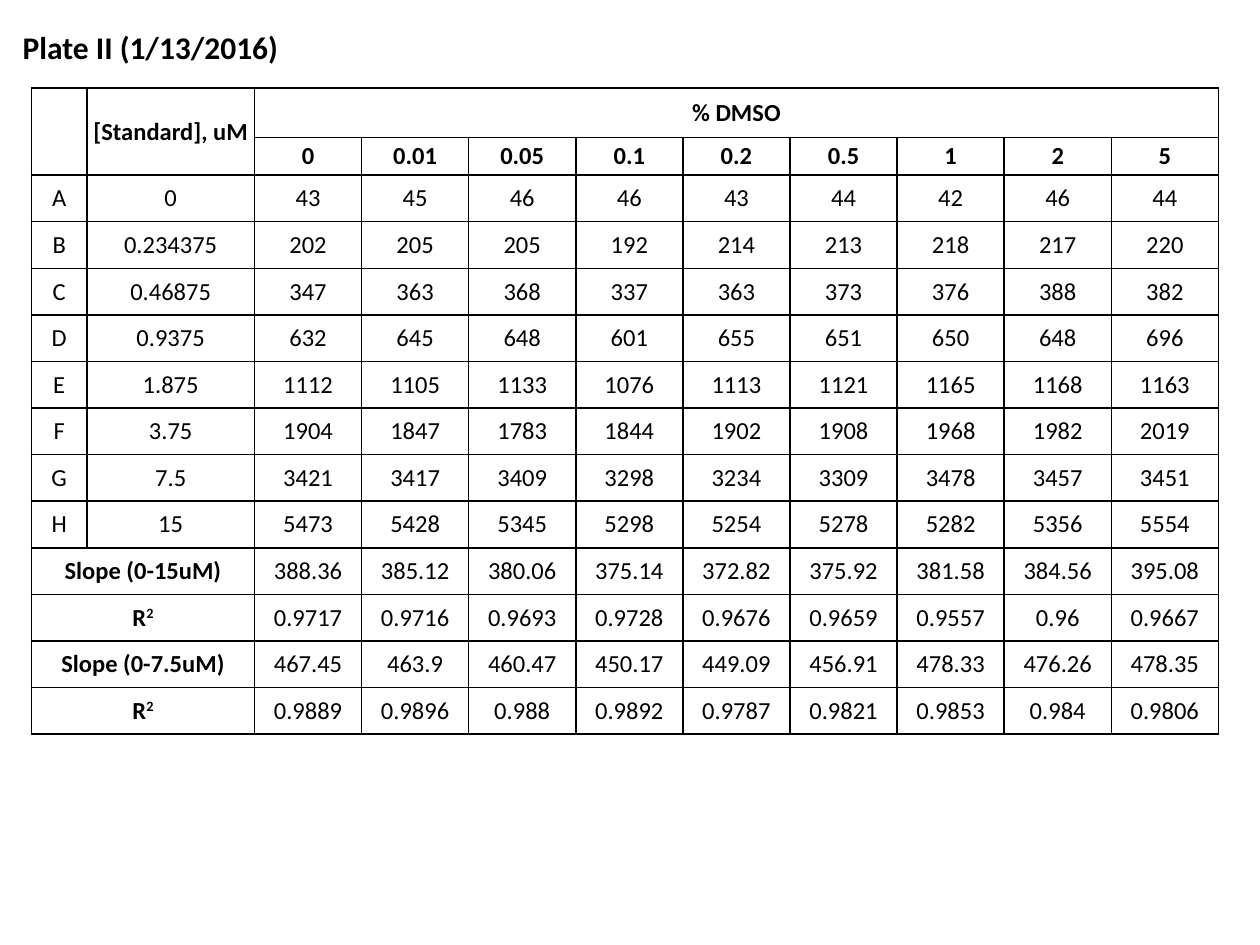
"""Build the Plate II slide: a table of readings by standard and % DMSO."""
from dataclasses import dataclass

from lxml import etree
from pptx import Presentation
from pptx import util as u
from pptx.dml import color
from pptx.enum import text
from pptx.oxml import ns


@dataclass(frozen=True)
class Theme:
    font: str = "Calibri"
    ink: color.RGBColor = color.RGBColor(0, 0, 0)
    title: u.Pt = u.Pt(18)
    body: u.Pt = u.Pt(14)
    border: u.Pt = u.Pt(1)


theme = Theme()


def write(tf, words, size=theme.body, bold=False, align=text.PP_ALIGN.CENTER, sup=""):
    p = tf.paragraphs[0]
    p.alignment = align
    for part in [words, sup] if sup else [words]:
        r = p.add_run()
        r.text = part
        r.font.name, r.font.size, r.font.bold = theme.font, size, bold
        r.font.color.rgb = theme.ink
    if sup:
        r.font._element.set("baseline", "30000")


def add_borders(cell):
    tcPr = cell._tc.get_or_add_tcPr()
    for side in ("a:lnL", "a:lnR", "a:lnT", "a:lnB"):
        ln = etree.SubElement(tcPr, ns.qn(side), w=str(theme.border))
        fill = etree.SubElement(ln, ns.qn("a:solidFill"))
        etree.SubElement(fill, ns.qn("a:srgbClr"), val=str(theme.ink))


dmso = "0 0.01 0.05 0.1 0.2 0.5 1 2 5".split()
readings = """
A 0 43 45 46 46 43 44 42 46 44
B 0.234375 202 205 205 192 214 213 218 217 220
C 0.46875 347 363 368 337 363 373 376 388 382
D 0.9375 632 645 648 601 655 651 650 648 696
E 1.875 1112 1105 1133 1076 1113 1121 1165 1168 1163
F 3.75 1904 1847 1783 1844 1902 1908 1968 1982 2019
G 7.5 3421 3417 3409 3298 3234 3309 3478 3457 3451
H 15 5473 5428 5345 5298 5254 5278 5282 5356 5554
"""
fits = [
    ("Slope (0-15uM)", "388.36 385.12 380.06 375.14 372.82 375.92 381.58 384.56 395.08"),
    ("R", "0.9717 0.9716 0.9693 0.9728 0.9676 0.9659 0.9557 0.96 0.9667"),
    ("Slope (0-7.5uM)", "467.45 463.9 460.47 450.17 449.09 456.91 478.33 476.26 478.35"),
    ("R", "0.9889 0.9896 0.988 0.9892 0.9787 0.9821 0.9853 0.984 0.9806"),
]
rows = [["", "[Standard], uM", "% DMSO"] + [""] * (len(dmso) - 1), ["", ""] + dmso]
rows += [line.split() for line in readings.strip().splitlines()]
first_fit = len(rows)
rows += [[label, ""] + values.split() for label, values in fits]
widths = [0.44, 1.33] + [0.85] * len(dmso)
heights = [0.39, 0.29] + [0.37] * (len(rows) - 2)

prs = Presentation()
prs.slide_width, prs.slide_height = u.Inches(10), u.Inches(7.5)
s = prs.slides.add_slide(prs.slide_layouts[5])

sp = s.shapes.title
sp.left, sp.top, sp.width, sp.height = map(u.Inches, (0.08, 0.17, 2.25, 0.4))
tf = sp.text_frame
tf.word_wrap = False
tf.auto_size = text.MSO_AUTO_SIZE.SHAPE_TO_FIT_TEXT
tf.vertical_anchor = text.MSO_ANCHOR.TOP
write(tf, "Plate II (1/13/2016)", size=theme.title, bold=True, align=text.PP_ALIGN.LEFT)

table = s.shapes.add_table(
    len(rows), len(widths), u.Inches(0.25), u.Inches(0.7),
    u.Inches(sum(widths)), u.Inches(sum(heights))).table
table.first_row = table.horz_banding = False
for column, width in zip(table.columns, widths):
    column.width = u.Inches(width)
for row, height in zip(table.rows, heights):
    row.height = u.Inches(height)

for i, row in enumerate(rows):
    for j, words in enumerate(row):
        cell = table.cell(i, j)
        cell.margin_left = cell.margin_right = cell.margin_top = cell.margin_bottom = 0
        cell.vertical_anchor = text.MSO_ANCHOR.MIDDLE
        add_borders(cell)
        cell.fill.background()
        bold = i < 2 or (i >= first_fit and j == 0)
        write(cell.text_frame, words, bold=bold, sup="2" if words == "R" else "")

for j in range(2):
    table.cell(0, j).merge(table.cell(1, j))
table.cell(0, 2).merge(table.cell(0, len(widths) - 1))
for i in range(first_fit, len(rows)):
    table.cell(i, 0).merge(table.cell(i, 1))

prs.save("out.pptx")
